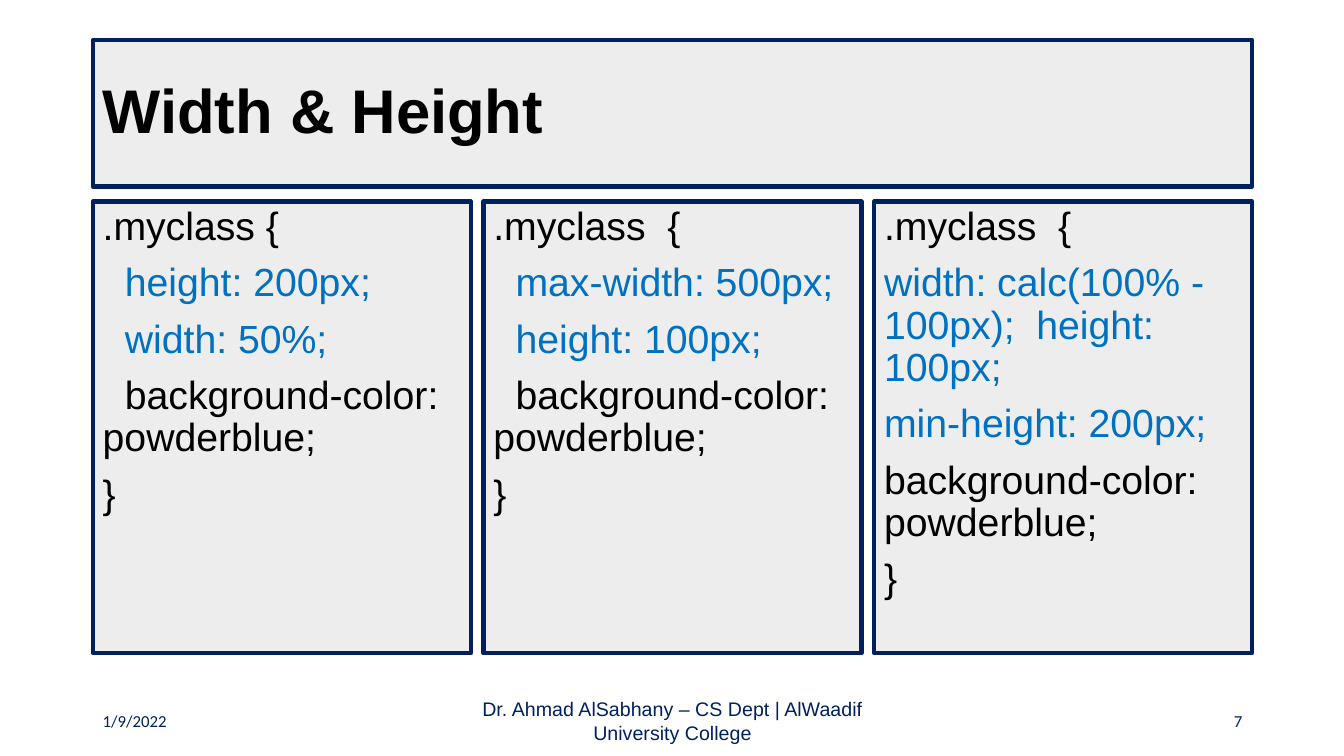
"""Build the Width & Height slide with three CSS examples."""
from pptx import Presentation
from pptx.dml.color import RGBColor
from pptx.enum.shapes import MSO_SHAPE
from pptx.enum.text import MSO_ANCHOR, PP_ALIGN
from pptx.util import Inches, Pt

RECTANGLE = MSO_SHAPE.RECTANGLE
TOP, MIDDLE = MSO_ANCHOR.TOP, MSO_ANCHOR.MIDDLE
LEFT, CENTER, RIGHT = PP_ALIGN.LEFT, PP_ALIGN.CENTER, PP_ALIGN.RIGHT
BLACK, BLUE, NAVY, GRAY = "000000", "0070C0", "002060", "EDEDED"
MARGIN = 0.92
COLUMN_WIDTH, CONTENT_WIDTH = 3.75, 11.5
COLUMN_STEP = (CONTENT_WIDTH - COLUMN_WIDTH) / 2


def color(value):
    return RGBColor.from_string(value)


def add_text(shape, lines, size, font="Arial", anchor=TOP, align=LEFT, bold=False):
    text_frame = shape.text_frame
    text_frame.word_wrap = True
    text_frame.vertical_anchor = anchor
    text_frame.text = "\n".join(text for text, _ in lines)
    for paragraph, (_, text_color) in zip(text_frame.paragraphs, lines):
        paragraph.alignment = align
        for run in paragraph.runs:
            run.font.name = font
            run.font.size = Pt(size)
            run.font.bold = bold
            run.font.color.rgb = color(text_color)


presentation = Presentation()
presentation.slide_width = Inches(13.33)
presentation.slide_height = Inches(7.5)
slide = presentation.slides.add_slide(presentation.slide_layouts[6])

title = [("Width & Height", BLACK)]
examples = [
    [(".myclass {", BLACK), ("height: 200px;", BLUE), ("width: 50%;", BLUE),
     ("background-color: powderblue;", BLACK), ("}", BLACK)],
    [(".myclass  {", BLACK), ("max-width: 500px;", BLUE), ("height: 100px;", BLUE),
     ("background-color: powderblue;", BLACK), ("}", BLACK)],
    [(".myclass  {", BLACK), ("width: calc(100% - 100px);  height: 100px;", BLUE),
     ("min-height: 200px;", BLUE), ("background-color: powderblue;", BLACK), ("}", BLACK)],
]
first_line_indents = [0.22, 0.22, 0]

panels = [(MARGIN, 0.4, CONTENT_WIDTH, 1.45, title, 44, MIDDLE, True, 0, 0)]
for column, (lines, indent) in enumerate(zip(examples, first_line_indents)):
    left = MARGIN + column * COLUMN_STEP
    panels.append((left, 2, COLUMN_WIDTH, 4.48, lines, 28, TOP, False, 10, indent))

for left, top, width, height, lines, size, anchor, bold, space, indent in panels:
    panel = slide.shapes.add_shape(
        RECTANGLE, Inches(left), Inches(top), Inches(width), Inches(height))
    panel.shadow.inherit = False
    panel.fill.solid()
    panel.fill.fore_color.rgb = color(GRAY)
    panel.line.color.rgb = color(NAVY)
    panel.line.width = Pt(3)
    add_text(panel, lines, size, anchor=anchor, bold=bold)
    for paragraph in panel.text_frame.paragraphs:
        paragraph.line_spacing = 0.9
        paragraph.space_before = Pt(space)
    for paragraph in panel.text_frame.paragraphs[1:-1]:
        paragraph._p.get_or_add_pPr().set("indent", str(Inches(indent)))

footers = [
    (0.92, 3, "1/9/2022", 12, "Calibri", LEFT),
    (4.42, 4.5, "Dr. Ahmad AlSabhany – CS Dept | AlWaadif University College",
     14, "Arial", CENTER),
    (9.42, 3, "7", 12, "Calibri", RIGHT),
]
for left, width, text, size, font, align in footers:
    footer = slide.shapes.add_textbox(
        Inches(left), Inches(6.95), Inches(width), Inches(0.4))
    add_text(footer, [(text, NAVY)], size, font, MIDDLE, align)

presentation.save("out.pptx")
